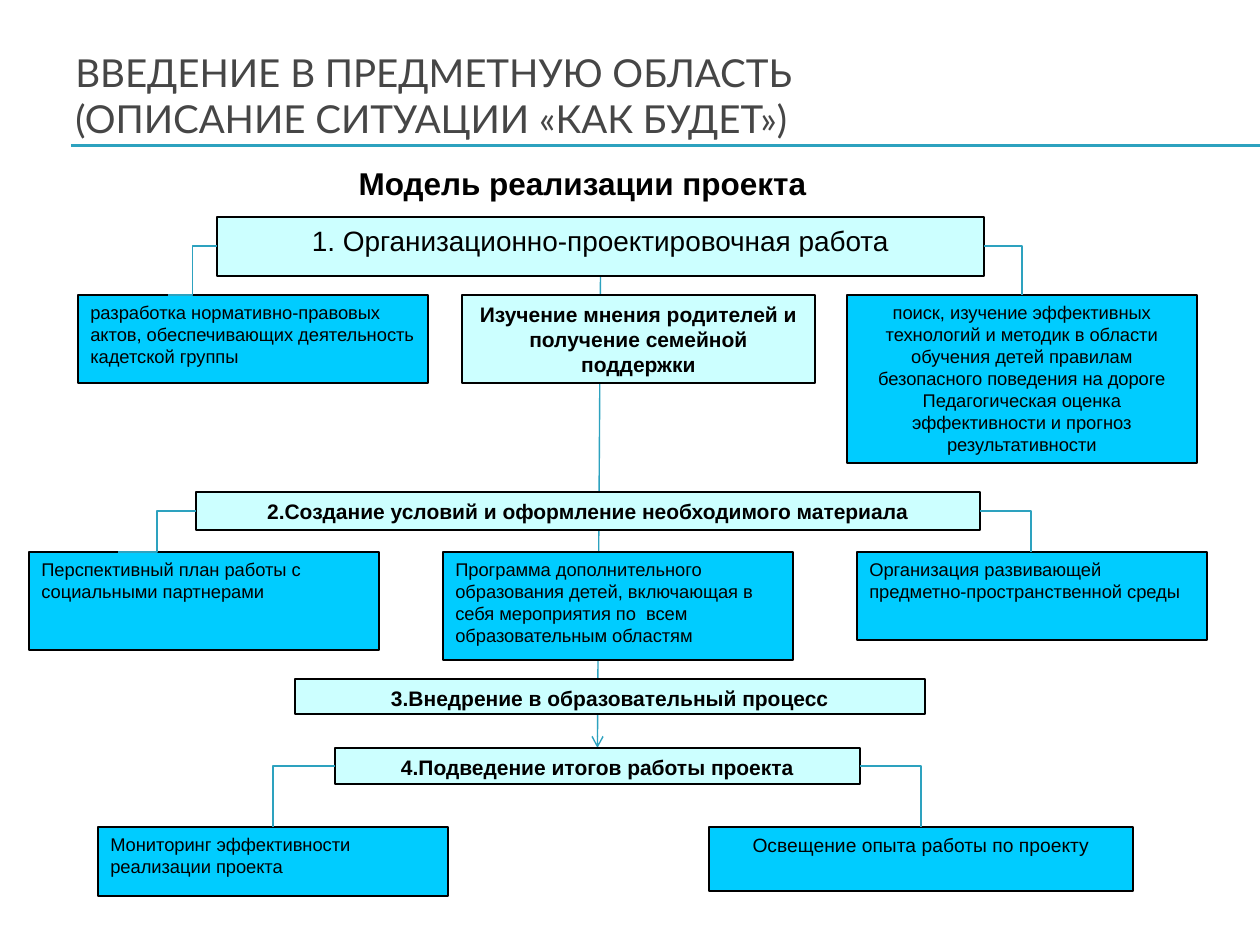
from pptx import Presentation
from pptx.dml.color import RGBColor
from pptx.enum.shapes import MSO_CONNECTOR as Connector, MSO_SHAPE as Shape
from pptx.enum.text import MSO_ANCHOR as Anchor, PP_ALIGN as Align
from pptx.oxml.ns import qn
from pptx.util import Emu, Pt
from lxml.etree import SubElement

SCALE = 914400 / 126
PALE = "CCFFFF"
BRIGHT = "00CCFF"
TEAL = "2DA2BF"
BLACK = "000000"

PHASES = [
    ((217, 217, 767, 59), "1. Организационно-проектировочная работа", {"size": 16}),
    ((196, 492, 784, 38), "2.Создание условий и оформление необходимого материала",
     {"size": 12, "bold": True}),
    ((295, 679, 630, 35), "3.Внедрение в образовательный процесс",
     {"size": 12, "bold": True}),
    ((335, 748, 525, 36), "4.Подведение итогов работы проекта",
     {"size": 12, "bold": True}),
    ((462, 295, 353, 88), "Изучение мнения родителей и получение семейной поддержки",
     {"size": 12, "bold": True}),
]

TASKS = [
    ((78, 295, 350, 88),
     "разработка нормативно-правовых актов, обеспечивающих деятельность кадетской группы", {}),
    ((847, 295, 350, 168),
     "поиск, изучение эффективных технологий и методик в области обучения детей правилам "
     "безопасного поведения на дороге\n"
     "Педагогическая оценка эффективности и прогноз результативности",
     {"align": Align.CENTER}),
    ((29, 552, 350, 98), "Перспективный план работы с социальными партнерами", {}),
    ((443, 552, 350, 108),
     "Программа дополнительного образования детей, включающая в себя мероприятия по  всем "
     "образовательным областям", {}),
    ((857, 552, 350, 88), "Организация развивающей предметно-пространственной среды", {}),
    ((98, 827, 350, 69), "Мониторинг эффективности реализации проекта", {}),
    ((709, 827, 424, 64), "Освещение опыта работы по проекту",
     {"size": 11, "align": Align.CENTER}),
]

BRANCHES = [
    ((217, 246), (168, 295), "bentConnector3"),
    ((984, 246), (1022, 295), "bentConnector2"),
    ((196, 511), (118, 552), "bentConnector3"),
    ((980, 511), (1031, 552), "bentConnector2"),
    ((335, 766), (273, 827), "bentConnector2"),
    ((860, 766), (921, 827), "bentConnector2"),
]


def px(*lengths):
    return [Emu(round(length * SCALE)) for length in lengths]


def color(value):
    return RGBColor.from_string(value)


def write(shape, text, size=10.5, font="Arial", fill=BLACK, bold=False,
          align=Align.LEFT, anchor=Anchor.TOP, wrap=True):
    frame = shape.text_frame
    frame.word_wrap = wrap
    frame.vertical_anchor = anchor
    frame.text = text
    for paragraph in frame.paragraphs:
        paragraph.alignment = align
        for run in paragraph.runs:
            run.font.size = Pt(size)
            run.font.name = font
            run.font.bold = bold
            run.font.color.rgb = color(fill)


def add_text(slide, area, text, **style):
    box = slide.shapes.add_textbox(*px(*area))
    write(box, text, anchor=Anchor.MIDDLE, **style)
    return box


def add_box(slide, area, text, fill, **style):
    box = slide.shapes.add_shape(Shape.RECTANGLE, *px(*area))
    box.shadow.inherit = False
    box.fill.solid()
    box.fill.fore_color.rgb = color(fill)
    box.line.color.rgb = color(BLACK)
    box.line.width = Pt(0.75)
    write(box, text, **style)
    return box


def add_line(slide, start, end, kind=Connector.STRAIGHT, width=0.79):
    line = slide.shapes.add_connector(kind, *px(*start, *end))
    line.line.color.rgb = color(TEAL)
    line.line.width = Pt(width)
    SubElement(line._element.spPr, qn("a:effectLst"))
    return line


def add_arrowhead(line):
    SubElement(line.line._get_or_add_ln(), qn("a:tailEnd"), type="arrow")


def add_branch(slide, start, end, preset):
    branch = add_line(slide, start, end, Connector.ELBOW)
    branch._element.spPr.find(qn("a:prstGeom")).set("prst", preset)


def main():
    presentation = Presentation()
    presentation.slide_width, presentation.slide_height = px(1260, 945)
    slide = presentation.slides.add_slide(presentation.slide_layouts[6])

    for y in (145, 146):
        add_line(slide, (71, y), (1260, y), width=0.75)
    title = add_text(slide, (63, 49, 1197, 92),
                     "ВВЕДЕНИЕ В ПРЕДМЕТНУЮ ОБЛАСТЬ\v(ОПИСАНИЕ СИТУАЦИИ «КАК БУДЕТ»)",
                     size=22, font="Lato", fill="464646")
    title.text_frame.margin_top = title.text_frame.margin_bottom = 0
    add_text(slide, (335, 157, 495, 51), "Модель реализации проекта",
             size=18, bold=True, align=Align.CENTER, wrap=False)

    trunk = add_line(slide, (601, 276), (597, 748))
    add_arrowhead(trunk)
    phases = [add_box(slide, area, text, PALE, align=Align.CENTER, **style)
              for area, text, style in PHASES]
    trunk.begin_connect(phases[0], 2)
    trunk.end_connect(phases[3], 0)

    for area, text, style in TASKS:
        add_box(slide, area, text, BRIGHT, **style)
    for start, end, preset in BRANCHES:
        add_branch(slide, start, end, preset)

    presentation.save("out.pptx")


if __name__ == "__main__":
    main()
